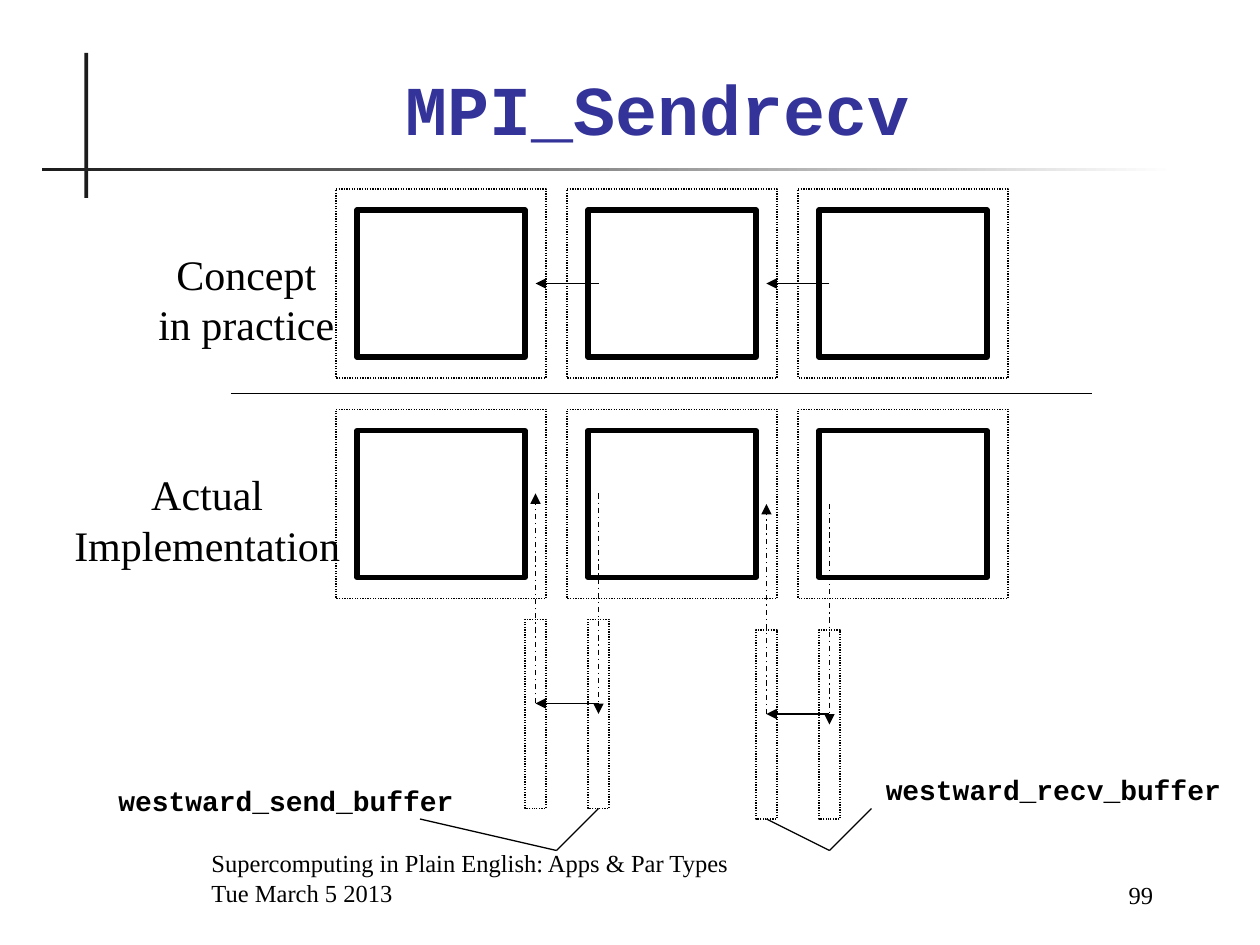
import pptx
import pptx.util
import pptx.dml.color
import pptx.enum.dml
import pptx.enum.shapes
import pptx.enum.text
import pptx.oxml
import pptx.oxml.ns
from pptx.util import Inches

COLORS = {"ink": "000000", "title": "333399", "rule": "1C1C1C", "paper": "FFFFFF"}
SERIF, MONO = "Times New Roman", "Courier New"
ALIGN = pptx.enum.text.PP_ALIGN
ANCHOR = pptx.enum.text.MSO_ANCHOR
DASH = pptx.enum.dml.MSO_LINE
CELL_PITCH = 22  # twelfths of an inch between neighbouring subdomains


def grid(steps):
    """Length on the diagram's grid of twelfths of an inch."""
    return Inches(steps / 12)


def color(name):
    return pptx.dml.color.RGBColor.from_string(COLORS[name])


def style_text(frame, text, size, font, align, name="ink", bold=False):
    frame.text = text
    for para in frame.paragraphs:
        para.alignment = align
        for span in para.runs:
            span.font.size = pptx.util.Pt(size)
            span.font.name = font
            span.font.bold = bold
            span.font.color.rgb = color(name)


def add_text(page, box, text, size, font, align=ALIGN.CENTER, bold=False,
             wrap=False, anchor=ANCHOR.TOP):
    frame = page.shapes.add_textbox(*map(Inches, box)).text_frame
    frame.word_wrap = wrap
    frame.vertical_anchor = anchor
    style_text(frame, text, size, font, align, bold=bold)


def add_rectangle(page, left, top, width, height):
    shape = page.shapes.add_shape(
        pptx.enum.shapes.MSO_SHAPE.RECTANGLE, left, top, width, height)
    shape.shadow.inherit = False
    return shape


def add_outline(page, box, weight=0.75, dash=None):
    shape = add_rectangle(page, *map(grid, box))
    shape.fill.background()
    shape.line.color.rgb = color("ink")
    shape.line.width = pptx.util.Pt(weight)
    if dash:
        shape.line.dash_style = dash
    return shape


def add_line(page, start, end, arrow=False, dash=None):
    line = page.shapes.add_connector(
        pptx.enum.shapes.MSO_CONNECTOR.STRAIGHT, *map(grid, start + end))
    line.line.color.rgb = color("ink")
    line.line.width = pptx.util.Pt(0.75)
    if dash:
        line.line.dash_style = dash
    if arrow:
        tail = pptx.oxml.parse_xml(
            '<a:tailEnd %s type="triangle"/>' % pptx.oxml.ns.nsdecls("a"))
        line.line._get_or_add_ln().append(tail)
    line._element.spPr.append(
        pptx.oxml.parse_xml("<a:effectLst %s/>" % pptx.oxml.ns.nsdecls("a")))
    return line


def add_header(page, box):
    # Crossed rules, the horizontal one fading out to the right
    upright = add_rectangle(page, Inches(0.67), Inches(0.42), Inches(0.03), Inches(1.15))
    upright.fill.solid()
    upright.fill.fore_color.rgb = color("rule")
    level = add_rectangle(page, Inches(0.33), Inches(1.33), Inches(9), Inches(0.03))
    level.fill.gradient()
    level.fill.gradient_angle = 0
    for stop, name, position in zip(level.fill.gradient_stops, ("rule", "paper"), (0, 1)):
        stop.color.rgb = color(name)
        stop.position = position
    for rule in (upright, level):
        rule.line.fill.background()

    title = page.shapes.title
    title.left, title.top, title.width, title.height = map(Inches, box)
    title.text_frame.vertical_anchor = ANCHOR.BOTTOM
    style_text(title.text_frame, "MPI_Sendrecv", 40, MONO, ALIGN.CENTER, "title", True)


def add_subdomains(page, left, top):
    """Three subdomains, each with a dotted ghost boundary around it."""
    for index in range(3):
        x = left + index * CELL_PITCH
        add_outline(page, (x + 2, top + 2, 16, 14), weight=3)
        add_outline(page, (x, top, 20, 18), dash=DASH.ROUND_DOT)


def add_concept(page, left, top):
    add_subdomains(page, left, top)
    for index in range(2):
        x, y = left + 19 + index * CELL_PITCH, top + 9
        add_line(page, (x + 6, y), (x, y), arrow=True)


def add_buffer_pair(page, left, top):
    """Receiving and sending buffers with the copies between them."""
    buffers = [add_outline(page, (x, top, 2, 18), dash=DASH.ROUND_DOT)
               for x in (left, left + 6)]
    west, east = left + 1, left + 7
    add_line(page, (west, top + 8), (west, top - 12), True, DASH.DASH_DOT)
    add_line(page, (east, top - 12), (east, top + 9), True, DASH.DASH_DOT)
    add_line(page, (east, top + 8), (west, top + 8), True)
    return buffers


def add_leader(page, buffer, elbow, label_end):
    """Bent line from the foot of a buffer to its label."""
    line = add_line(page, elbow, elbow)
    line.begin_connect(buffer, 2)
    add_line(page, label_end, elbow)


def add_implementation(page, left, top):
    add_subdomains(page, left, top)
    first, second = [
        add_buffer_pair(page, left + 18 + index * CELL_PITCH, top + 20 + index)
        for index in range(2)]
    add_leader(page, first[1], (left + 21, top + 42), (left + 8, top + 39))
    add_leader(page, second[0], (left + 47, top + 42), (left + 51, top + 38))


def add_labels(page):
    add_text(page, (1.15, 1.92, 1.61, 0.91), "Concept\nin practice", 24, SERIF)
    add_text(page, (0.48, 3.67, 2.33, 0.91), "Actual\nImplementation", 24, SERIF)
    add_text(page, (0.83, 6.17, 2.88, 0.37), "westward_send_buffer", 16, MONO, bold=True)
    add_text(page, (6.92, 6.08, 2.88, 0.37), "westward_recv_buffer", 16, MONO, bold=True)


def add_footer(page):
    add_text(page, (1.58, 6.75, 6.08, 0.5),
             "Supercomputing in Plain English: Apps & Par Types\nTue March 5 2013",
             14, SERIF, ALIGN.LEFT, wrap=True, anchor=ANCHOR.BOTTOM)
    add_text(page, (7.83, 6.77, 1.42, 0.5), "99", 14, SERIF, ALIGN.RIGHT,
             wrap=True, anchor=ANCHOR.BOTTOM)


def main():
    deck = pptx.Presentation()
    deck.slide_width, deck.slide_height = Inches(10), Inches(7.5)
    page = deck.slides.add_slide(deck.slide_layouts[5])
    add_header(page, (0.83, 0.5, 8.77, 0.74))
    add_concept(page, 32, 18)
    add_line(page, (22, 37.5), (104, 37.5))
    add_implementation(page, 32, 39)
    add_labels(page)
    add_footer(page)
    deck.save("out.pptx")


if __name__ == "__main__":
    main()
